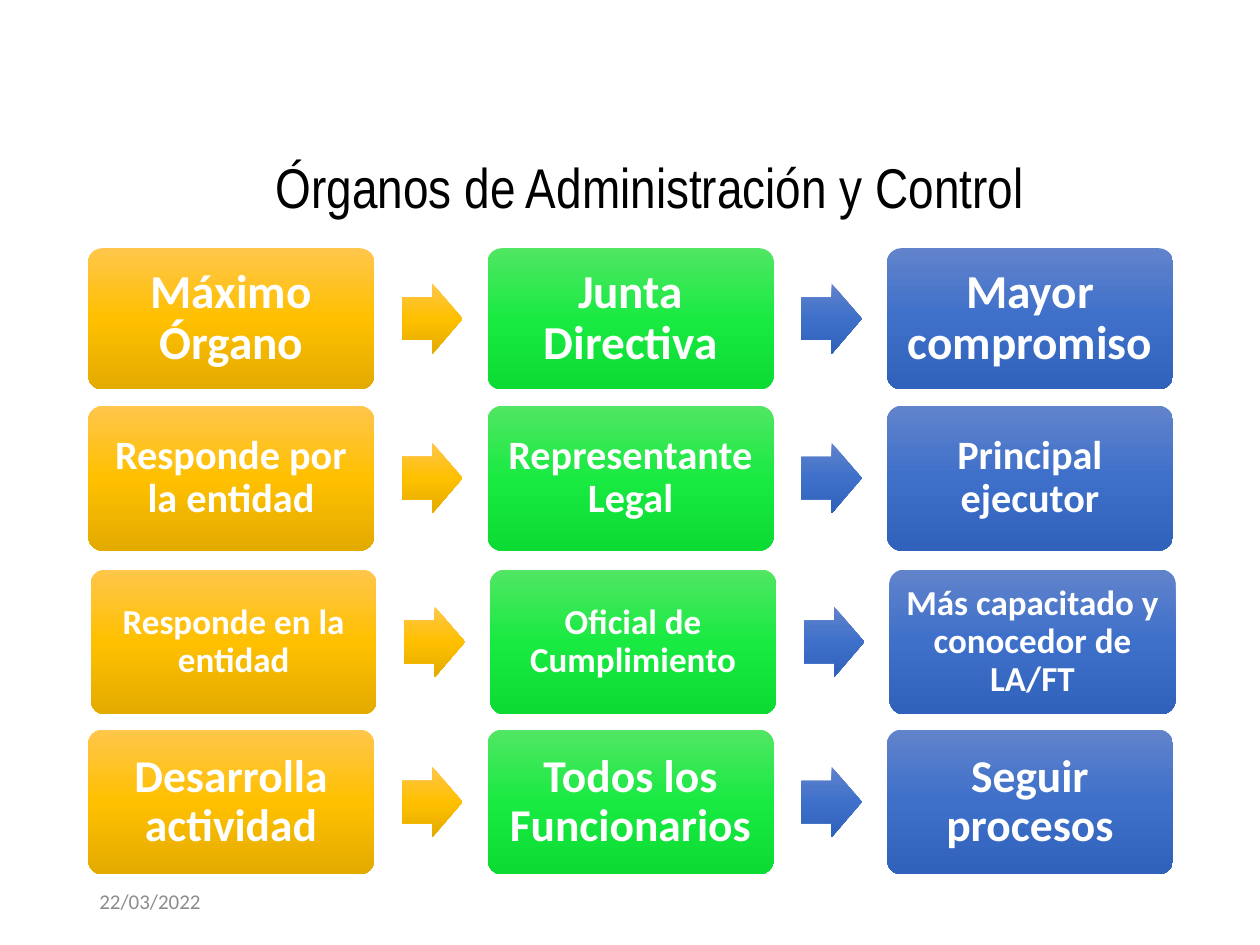
from copy import deepcopy

from pptx import Presentation
from pptx.dml.color import RGBColor
from pptx.enum.shapes import MSO_SHAPE
from pptx.enum.text import MSO_ANCHOR, PP_ALIGN
from pptx.oxml.ns import qn
from pptx.util import Inches, Pt

ROUND_RECT = MSO_SHAPE.ROUNDED_RECTANGLE
RIGHT_ARROW = MSO_SHAPE.RIGHT_ARROW
MIDDLE = MSO_ANCHOR.MIDDLE
LEFT, CENTER = PP_ALIGN.LEFT, PP_ALIGN.CENTER

COLORS = {"title": "000000", "date": "8C8C8C", "box_text": "FFFFFF"}
GRADIENTS = {
    "gold": ("FFC64B", "FFC000", "E3AB00"),
    "green": ("51E663", "19EA42", "0CDB34"),
    "blue": ("6183CB", "3E70CA", "3062BB"),
}
BOX_COLORS = ("gold", "green", "blue")
ARROW_COLORS = ("gold", "blue")

# Row geometry in inches
BOX_W, COLUMN_STEP = 2.27, 3.17
ARROW_W, ARROW_H, ARROW_OFFSET = 0.48, 0.56, 2.49

# left, top, height, text size, inset, box texts
ROWS = [
    (0.7, 1.97, 1.12, 27, 0.11,
     ("Máximo Órgano", "Junta Directiva", "Mayor compromiso")),
    (0.7, 3.22, 1.15, 23, 0.1,
     ("Responde por la entidad", "Representante Legal", "Principal ejecutor")),
    (0.72, 4.52, 1.15, 20, 0.08,
     ("Responde en la entidad", "Oficial de Cumplimiento",
      "Más capacitado y conocedor de LA/FT")),
    (0.7, 5.79, 1.15, 26, 0.11,
     ("Desarrolla actividad", "Todos los Funcionarios", "Seguir procesos")),
]


def set_text(tf, text, font, size, color, align=CENTER, bold=False, spacing=0.9):
    tf.word_wrap = True
    tf.vertical_anchor = MIDDLE
    p = tf.paragraphs[0]
    p.text = text
    p.alignment = align
    p.line_spacing = spacing
    p.font.name = font
    p.font.size = Pt(size)
    p.font.bold = bold
    p.font.color.rgb = RGBColor.from_string(COLORS[color])


def add_label(slide, x, y, w, h, text, font, size, color, **style):
    sp = slide.shapes.add_textbox(Inches(x), Inches(y), Inches(w), Inches(h))
    set_text(sp.text_frame, text, font, size, color, **style)


def fill_gradient(sp, name):
    """Fill with a three-stop gradient running from top to bottom."""
    sp.fill.gradient()
    sp.fill.gradient_angle = 270
    stop_list = sp._element.spPr.find(qn("a:gradFill")).find(qn("a:gsLst"))
    stop_list.append(deepcopy(stop_list[-1]))
    for i, (stop, color) in enumerate(zip(sp.fill.gradient_stops, GRADIENTS[name])):
        stop.position = i / 2
        stop.color.rgb = RGBColor.from_string(color)


def add_gradient_shape(slide, kind, x, y, w, h, gradient, adjustments):
    sp = slide.shapes.add_shape(kind, Inches(x), Inches(y), Inches(w), Inches(h))
    sp.shadow.inherit = False
    sp.line.fill.background()
    for i, value in enumerate(adjustments):
        sp.adjustments[i] = value
    fill_gradient(sp, gradient)
    return sp


def add_box(slide, x, y, h, gradient, text, size, inset):
    sp = add_gradient_shape(slide, ROUND_RECT, x, y, BOX_W, h, gradient, [0.1])
    tf = sp.text_frame
    tf.margin_left = tf.margin_right = Inches(inset)
    tf.margin_top = tf.margin_bottom = Inches(inset)
    set_text(tf, text, "Calibri", size, "box_text", bold=True)


def add_row(slide, left, top, height, size, inset, texts):
    for i, (text, gradient) in enumerate(zip(texts, BOX_COLORS)):
        add_box(slide, left + i * COLUMN_STEP, top, height, gradient, text, size, inset)
    arrow_top = top + (height - ARROW_H) / 2
    for i, gradient in enumerate(ARROW_COLORS):
        add_gradient_shape(slide, RIGHT_ARROW, left + ARROW_OFFSET + i * COLUMN_STEP,
                           arrow_top, ARROW_W, ARROW_H, gradient, [0.6, 0.5])


def main():
    prs = Presentation()
    prs.slide_width, prs.slide_height = Inches(10), Inches(7.5)
    slide = prs.slides.add_slide(prs.slide_layouts[6])

    # Title and date
    add_label(slide, 0.32, 1.17, 9.68, 0.68, "Órganos de Administración y Control",
              "Arial Narrow", 32, "title")
    add_label(slide, 0.69, 6.95, 2.25, 0.4, "22/03/2022", "Calibri", 12, "date",
              align=LEFT, spacing=1.0)

    # Rows of boxes linked by arrows
    for row in ROWS:
        add_row(slide, *row)

    prs.save("out.pptx")


if __name__ == "__main__":
    main()
